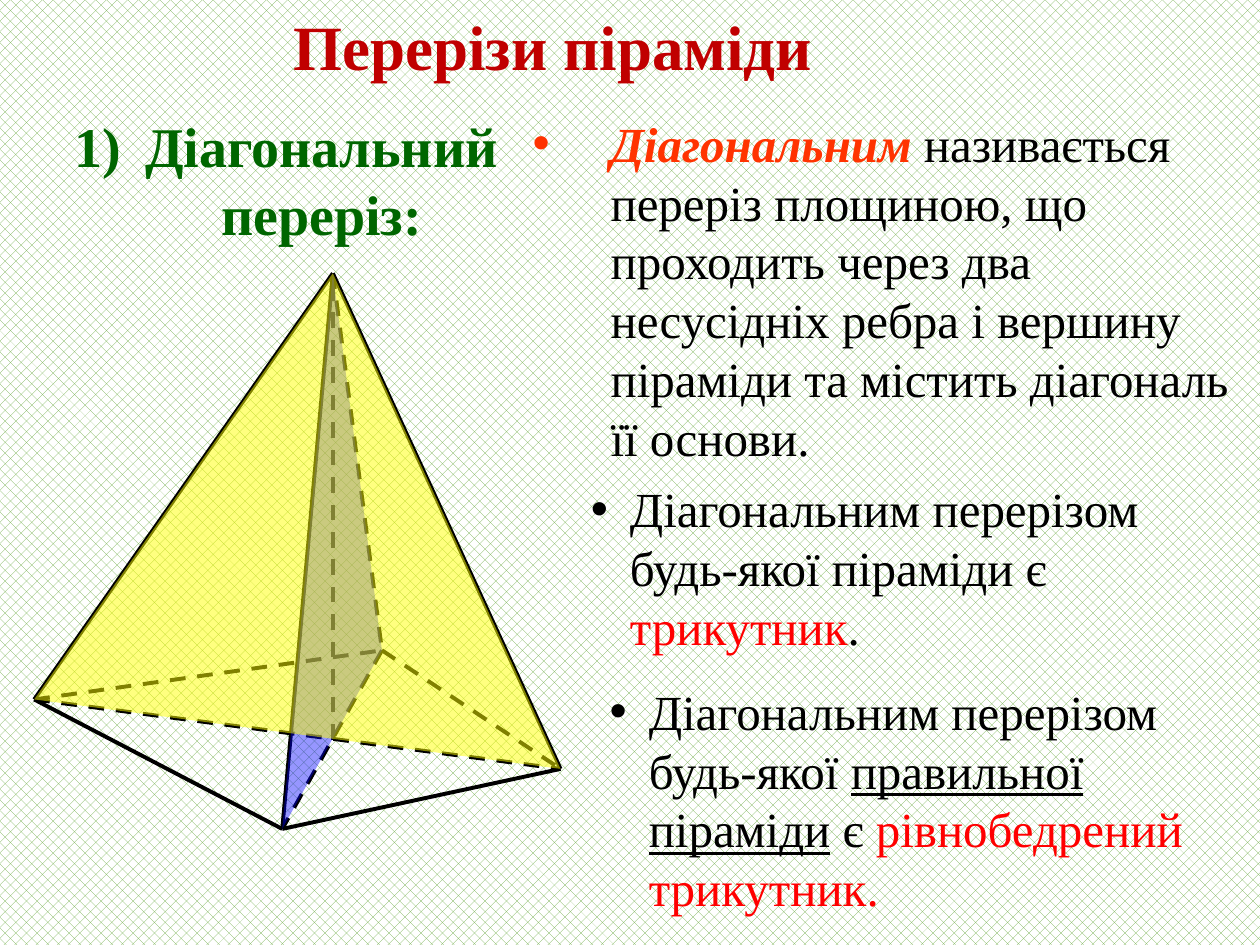
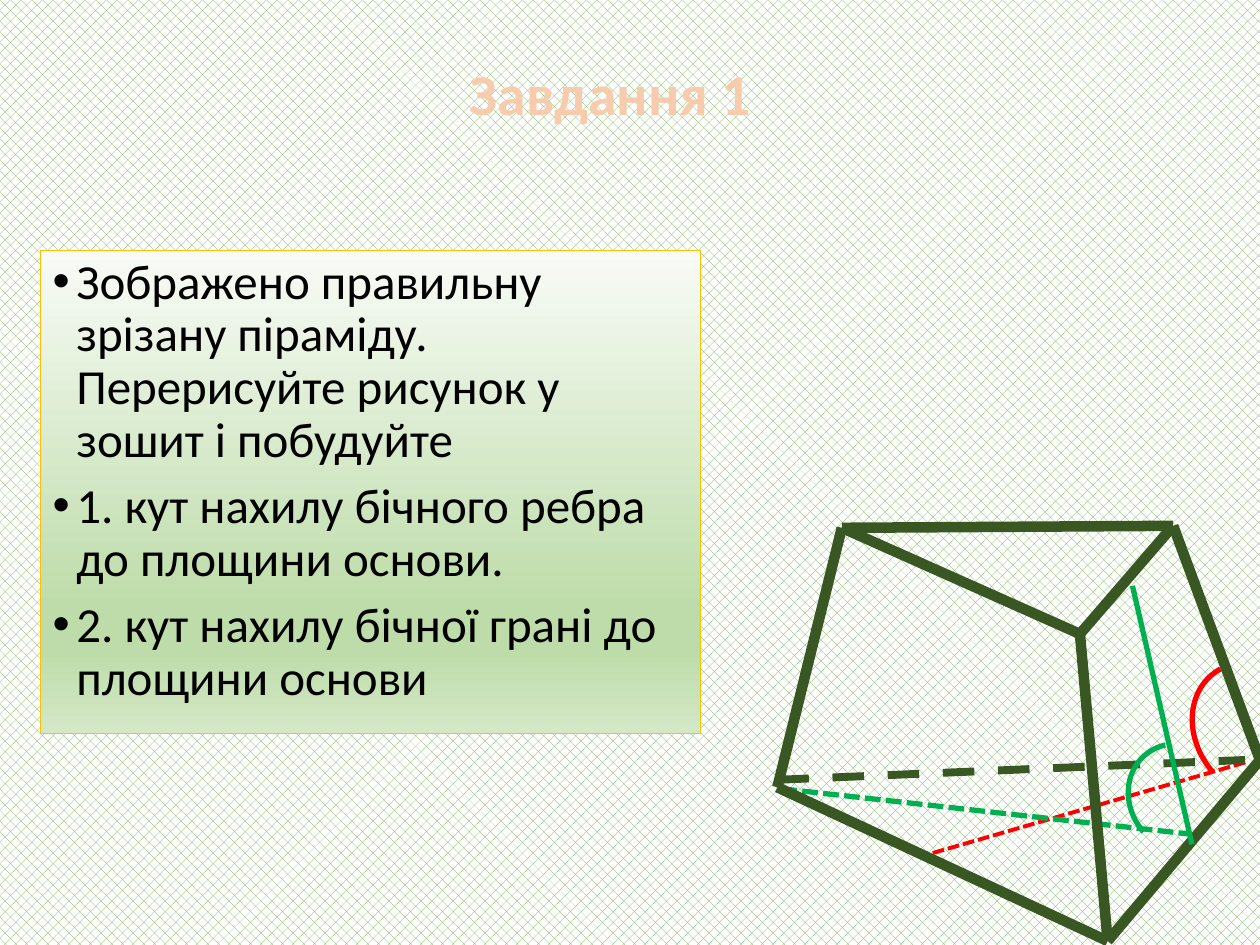
"""Build two slides on pyramid sections and the angles of a truncated pyramid."""
from dataclasses import dataclass
from typing import NamedTuple, Optional

from lxml import etree
from pptx import Presentation
from pptx.dml.color import RGBColor
from pptx.enum.dml import MSO_LINE, MSO_PATTERN
from pptx.enum.shapes import MSO_CONNECTOR, MSO_SHAPE
from pptx.enum.text import MSO_ANCHOR, MSO_AUTO_SIZE, PP_ALIGN
from pptx.oxml.ns import qn
from pptx.util import Cm, Pt

STRAIGHT = MSO_CONNECTOR.STRAIGHT
ARC, RECTANGLE = MSO_SHAPE.ARC, MSO_SHAPE.RECTANGLE
DASH, SYS_DASH = MSO_LINE.DASH, MSO_LINE.SQUARE_DOT
TOP, MIDDLE = MSO_ANCHOR.TOP, MSO_ANCHOR.MIDDLE
LEFT, CENTER = PP_ALIGN.LEFT, PP_ALIGN.CENTER
NO_FIT = MSO_AUTO_SIZE.NONE
PERCENT_40 = MSO_PATTERN.from_xml("pct40")
TITLE_ONLY = 5


@dataclass(frozen=True)
class Theme:
    serif: str = "Times New Roman"
    sans: str = "Calibri"
    title_size: float = 36
    task_size: float = 33
    heading_size: float = 32
    text_size: float = 28
    black: str = "000000"
    white: str = "FFFFFF"
    pattern: str = "70AD47"
    title: str = "C00000"
    heading: str = "006600"
    term: str = "FF3300"
    red: str = "FF0000"
    green: str = "00B050"
    solid: str = "385723"
    task: str = "F8CBAD"
    task_outline: str = "44546A"
    panel_line: str = "FFC000"
    section: str = "0000FF"
    face: str = "FFFF00"
    panel_stops: tuple = ((0, "F8FBF6"), (74, "BEDCAA"), (83, "BEDCAA"), (100, "D4E8C6"))


T = Theme()


class Point(NamedTuple):
    x: float
    y: float


class Box(NamedTuple):
    x: float
    y: float
    w: float
    h: float

    def lengths(self) -> list:
        return [Cm(v) for v in self]


class Run(NamedTuple):
    text: str
    color: str = T.black
    bold: bool = False
    italic: bool = False
    underline: bool = False


class Edge(NamedTuple):
    start: Point
    end: Point
    color: str = T.black
    width: float = 2.25
    dash: Optional[int] = None


class AngleArc(NamedTuple):
    box: Box
    color: str
    sweep: float


class Note(NamedTuple):
    box: Box
    indent: float
    runs: tuple


def rgb(value: str) -> RGBColor:
    return RGBColor.from_string(value)


def add_edge(slide, edge: Edge) -> None:
    ends = [Cm(v) for v in (*edge.start, *edge.end)]
    line = slide.shapes.add_connector(STRAIGHT, *ends)
    line.line.color.rgb = rgb(edge.color)
    line.line.width = Pt(edge.width)
    if edge.dash is not None:
        line.line.dash_style = edge.dash
    etree.SubElement(line._element.spPr, qn("a:effectLst"))


def add_face(slide, corners: tuple, color: str, opacity: int) -> None:
    points = [(Cm(c.x), Cm(c.y)) for c in corners]
    builder = slide.shapes.build_freeform(*points[0])
    builder.add_line_segments(points[1:], close=True)
    sp = builder.convert_to_shape()
    sp.shadow.inherit = False
    sp.line.fill.background()
    sp.fill.solid()
    sp.fill.fore_color.rgb = rgb(color)
    clr = sp._element.spPr.find(".//" + qn("a:srgbClr"))
    etree.SubElement(clr, qn("a:alpha"), val=str(opacity * 1000))


def add_arc(slide, arc: AngleArc) -> None:
    sp = slide.shapes.add_shape(ARC, *arc.box.lengths())
    sp.shadow.inherit = False
    sp.rotation = 228.7
    sp.adjustments[0] = 162
    sp.adjustments[1] = arc.sweep
    sp.fill.background()
    sp.line.color.rgb = rgb(arc.color)
    sp.line.width = Pt(3)


def write_runs(p, runs: tuple, font: str, size: float) -> None:
    for run in runs:
        r = p.add_run()
        r.text = run.text
        r.font.name, r.font.size = font, Pt(size)
        r.font.color.rgb = rgb(run.color)
        r.font.bold, r.font.italic = run.bold, run.italic
        r.font.underline = run.underline


def add_bullet(p, indent: float, numbered: bool = False) -> None:
    pPr = p._p.get_or_add_pPr()
    pPr.set("marL", str(Cm(indent)))
    pPr.set("indent", str(-Cm(indent)))
    if numbered:
        etree.SubElement(pPr, qn("a:buAutoNum"), type="arabicParenR")
    else:
        etree.SubElement(pPr, qn("a:buFont"), typeface="Arial")
        etree.SubElement(pPr, qn("a:buChar"), char="•")


def prepare_frame(sp, anchor: int = TOP):
    tf = sp.text_frame
    tf.word_wrap = True
    tf.auto_size = NO_FIT
    tf.vertical_anchor = anchor
    return tf


def set_title(slide, box: Box, run: Run, font: str, size: float, anchor: int, align: int):
    sp = slide.shapes.title
    sp.left, sp.top, sp.width, sp.height = box.lengths()
    p = prepare_frame(sp, anchor).paragraphs[0]
    p.alignment = align
    write_runs(p, (run,), font, size)
    return p.runs[0]


def add_note(slide, note: Note, size: float = T.text_size, numbered: bool = False):
    sp = slide.shapes.add_textbox(*note.box.lengths())
    p = prepare_frame(sp).paragraphs[0]
    write_runs(p, note.runs, T.serif, size)
    add_bullet(p, note.indent, numbered)
    return p


def add_panel(slide, box: Box, items: tuple) -> None:
    sp = slide.shapes.add_shape(RECTANGLE, *box.lengths())
    sp.shadow.inherit = False
    sp.line.color.rgb = rgb(T.panel_line)
    sp.line.width = Pt(0.5)
    sp.fill.gradient()
    sp.fill.gradient_angle = 270
    stops = sp._element.spPr.find(".//" + qn("a:gsLst"))
    for stop in list(stops):
        stops.remove(stop)
    for position, color in T.panel_stops:
        gs = etree.SubElement(stops, qn("a:gs"), pos=str(position * 1000))
        etree.SubElement(gs, qn("a:srgbClr"), val=color)
    tf = prepare_frame(sp)
    for i, item in enumerate(items):
        p = tf.add_paragraph() if i else tf.paragraphs[0]
        p.alignment = LEFT
        p.line_spacing = 0.9
        p.space_before = Pt(7.5 if i else 0)
        write_runs(p, (Run(item),), T.sans, T.text_size)
        add_bullet(p, 0.48)


def build_sections(slide) -> None:
    set_title(slide, Box(3.71, 0.03, 14.88, 1.8), Run("Перерізи піраміди", T.title, True),
              T.serif, T.title_size, TOP, CENTER)

    apex, foot = Point(6.71, 5.51), Point(6.71, 14.91)
    left, front = Point(0.69, 14.1), Point(5.69, 16.71)
    right, back = Point(11.3, 15.5), Point(7.7, 13.11)
    visible = ((left, front), (front, right), (apex, left), (apex, front), (apex, right))
    hidden = ((left, back), (back, right), (left, right), (back, front),
              (foot, apex), (apex, back))
    for dash, pairs in ((DASH, hidden), (None, visible)):
        for start, end in pairs:
            add_edge(slide, Edge(start, end, dash=dash))

    notes = (
        Note(Box(10.49, 2.16, 14.68, 7.44), 1.57, (
            Run("Діагональним ", T.term, True, True),
            Run("називається переріз площиною, що проходить через два несусідніх "
                "ребра і вершину піраміди та містить діагональ її основи."))),
        Note(Box(11.66, 9.53, 12.4, 3.84), 0.79, (
            Run("Діагональним перерізом будь-якої піраміди є "),
            Run("трикутник", T.red), Run("."))),
        Note(Box(12.04, 13.61, 12.4, 5.05), 0.79, (
            Run("Діагональним перерізом будь-якої "),
            Run("правильної піраміди", underline=True), Run(" є "),
            Run("рівнобедрений трикутник.", T.red))),
    )
    for note in notes:
        add_note(slide, note)

    add_face(slide, (apex, back, front), T.section, 41)
    add_face(slide, (apex, right, left), T.face, 50)
    heading = Note(Box(0.2, 2.13, 11.15, 3), 1.42,
                   (Run("Діагональний переріз:", T.heading, True),))
    add_note(slide, heading, T.heading_size, numbered=True).alignment = CENTER


def build_task(slide) -> None:
    r = set_title(slide, Box(9.22, 0.28, 7.8, 3.18), Run("Завдання 1", T.task, True),
                  T.sans, T.task_size, MIDDLE, LEFT)
    outline = etree.Element(qn("a:ln"), w=str(Pt(1.75)))
    fill = etree.SubElement(outline, qn("a:solidFill"))
    etree.SubElement(fill, qn("a:srgbClr"), val=T.task_outline)
    r.font._element.insert(0, outline)

    add_panel(slide, Box(0.81, 5.05, 13.31, 9.73), (
        "Зображено правильну зрізану піраміду. Перерисуйте рисунок у зошит і побудуйте",
        "1. кут нахилу бічного ребра до площини основи.",
        "2. кут нахилу бічної грані до площини основи",
    ))

    top_left, top_right, top_front = Point(16.97, 10.64), Point(23.65, 10.6), Point(21.77, 12.78)
    low_left, low_right, low_front = Point(15.67, 15.87), Point(25.4, 15.32), Point(22.33, 18.97)
    add_edge(slide, Edge(Point(25.1, 15.37), Point(18.72, 17.22), T.red, 2.25, SYS_DASH))
    add_edge(slide, Edge(Point(15.75, 15.9), Point(23.95, 16.81), T.green, 3, SYS_DASH))
    add_edge(slide, Edge(Point(15.67, 15.72), Point(25.1, 15.32), T.solid, 4.5, DASH))
    top = (top_left, top_right, top_front)
    low = (low_left, low_right, low_front)
    outline_pairs = (*zip(top, low), *zip(top, top[1:] + top[:1]),
                     (low_right, low_front), (low_front, low_left))
    for start, end in outline_pairs:
        add_edge(slide, Edge(start, end, T.solid, 6))
    add_arc(slide, AngleArc(Box(23.9, 13.49, 3, 2.51), T.red, 5.425))
    add_edge(slide, Edge(Point(22.83, 11.81), Point(24.03, 17.02), T.green, 3))
    add_arc(slide, AngleArc(Box(22.68, 15.06, 2.29, 2.06), T.green, 14.413))


def main() -> None:
    prs = Presentation()
    prs.slide_width, prs.slide_height = Cm(25.4), Cm(19.05)
    fill = prs.slide_master.background.fill
    fill.patterned()
    fill.pattern = PERCENT_40
    fill.fore_color.rgb = rgb(T.pattern)
    fill.back_color.rgb = rgb(T.white)
    for build in (build_sections, build_task):
        build(prs.slides.add_slide(prs.slide_layouts[TITLE_ONLY]))
    prs.save("out.pptx")


if __name__ == "__main__":
    main()
